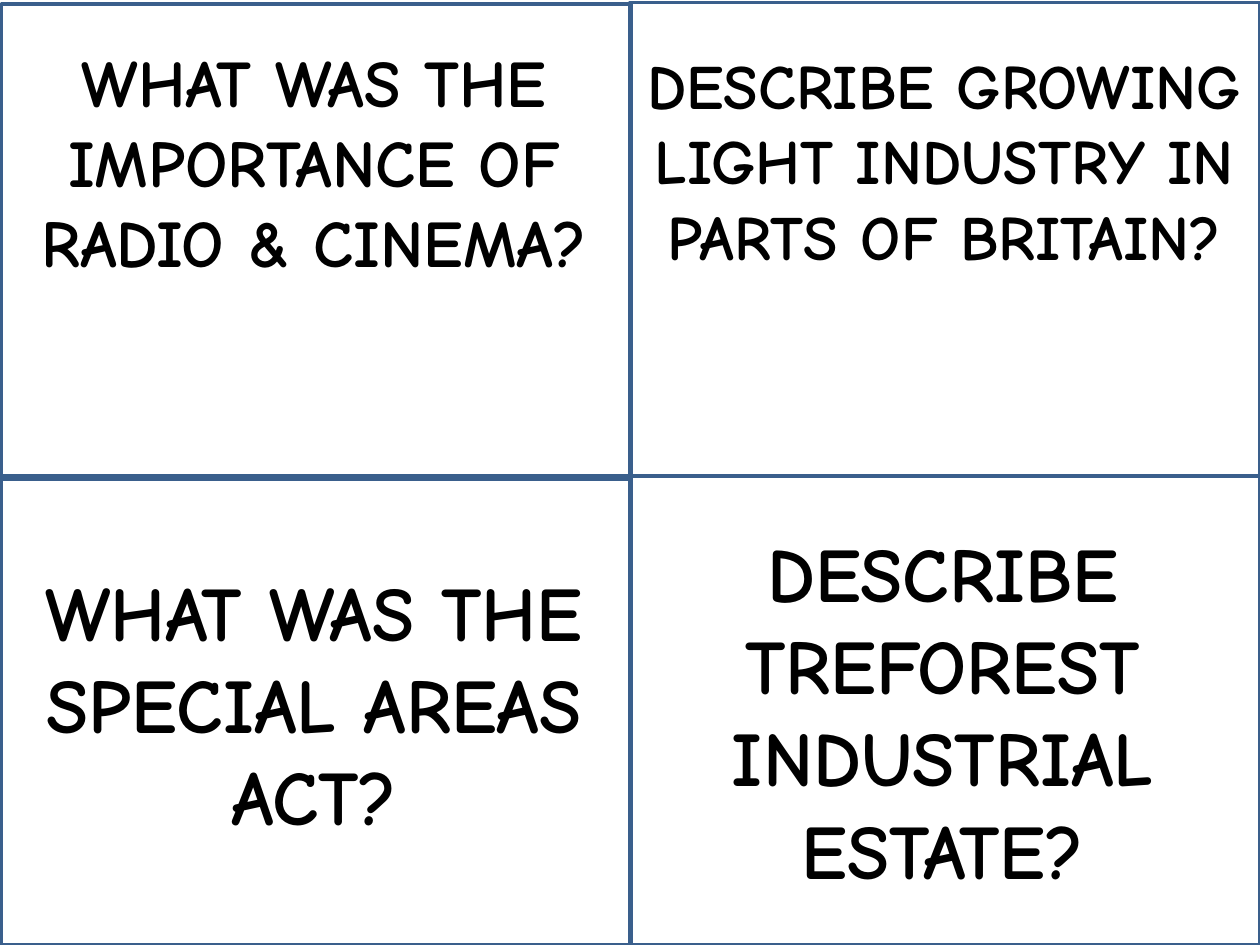
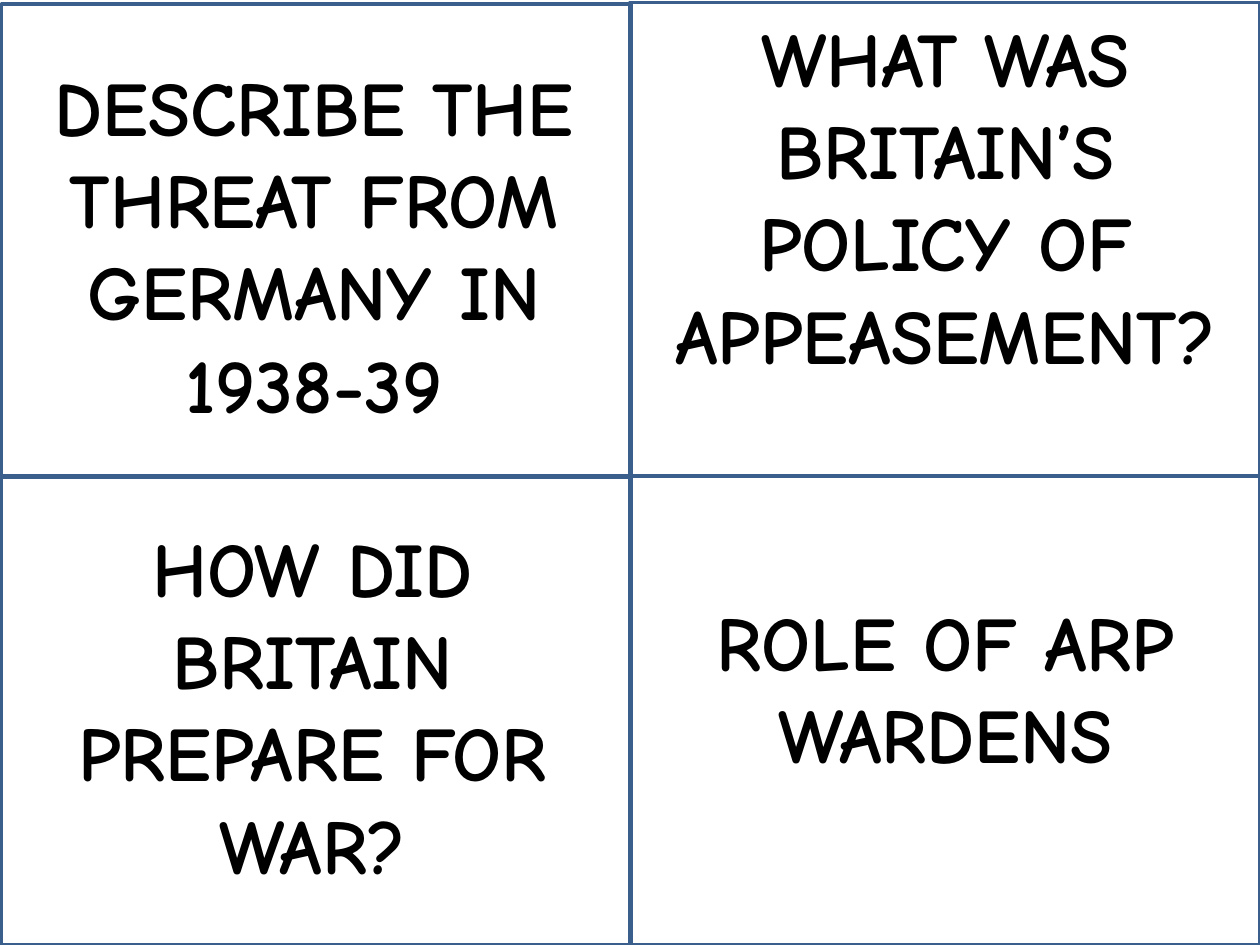
from pptx import Presentation
from pptx.dml.color import RGBColor
from pptx.enum.shapes import MSO_SHAPE as Shape
from pptx.enum.text import MSO_AUTO_SIZE as AutoSize, PP_ALIGN as Align
from pptx.util import Cm, Pt

FONT = "Comic Neue"
INK = "000000"
FRAME_LINE = "3A5F8C"
SLIDE_W, SLIDE_H = 25.4, 19.05
CARD_W = SLIDE_W / 2
TOP_H, BOTTOM_Y, BOTTOM_H = 9.55, 9.6, 9.45
TEXT_W = 12.67

DECK = [
    {
        "top_left_h": 9.58,
        "questions": [
            ("WHAT WAS THE IMPORTANCE OF RADIO & CINEMA?", -0.03, 0.71, 12.73, 6.76, 38),
            ("DESCRIBE GROWING LIGHT INDUSTRY IN PARTS OF BRITAIN?", 12.7, 0.81, TEXT_W, 7.95, 36),
            ("WHAT WAS THE SPECIAL AREAS ACT?", 0, 11.25, TEXT_W, 5.89, 44),
            ("DESCRIBE TREFOREST INDUSTRIAL ESTATE?", 12.67, 10.46, TEXT_W, 7.77, 44),
        ],
    },
    {
        "top_left_h": TOP_H,
        "questions": [
            ("DESCRIBE THE THREAT FROM GERMANY IN 1938-39", -0.03, 1.07, 12.73, 7.77, 44),
            ("WHAT WAS BRITAIN’S POLICY OF APPEASEMENT?", 12.73, 0.08, TEXT_W, 9.65, 44),
            ("HOW DID BRITAIN PREPARE FOR WAR?", -0.03, 10.36, TEXT_W, 7.77, 44),
            ("ROLE OF ARP WARDENS", 12.73, 11.86, TEXT_W, 4.01, 44),
        ],
    },
]


def color(hex_string):
    """Turn a hex string into a colour."""
    return RGBColor.from_string(hex_string)


def add_frame(s, x, y, h):
    """Draw the outline of one card."""
    sp = s.shapes.add_shape(Shape.RECTANGLE, Cm(x), Cm(y), Cm(CARD_W), Cm(h))
    sp.shadow.inherit = False
    sp.fill.background()
    sp.line.color.rgb = color(FRAME_LINE)
    sp.line.width = Pt(2)


def add_frames(s, top_left_h):
    """Draw the four card outlines of a slide."""
    add_frame(s, CARD_W, 0.05, TOP_H)
    add_frame(s, CARD_W, BOTTOM_Y, BOTTOM_H)
    add_frame(s, 0.03, 0.08, top_left_h)
    add_frame(s, 0.03, BOTTOM_Y, BOTTOM_H)


def add_question(s, text, x, y, w, h, size):
    """Write one centred question."""
    tf = s.shapes.add_textbox(Cm(x), Cm(y), Cm(w), Cm(h)).text_frame
    tf.word_wrap = True
    tf.auto_size = AutoSize.SHAPE_TO_FIT_TEXT
    p = tf.paragraphs[0]
    p.alignment = Align.CENTER
    r = p.add_run()
    r.text = text
    r.font.name = FONT
    r.font.size = Pt(size)
    r.font.bold = True
    r.font.color.rgb = color(INK)


def main():
    """Build the question cards and save them."""
    prs = Presentation()
    prs.slide_width, prs.slide_height = Cm(SLIDE_W), Cm(SLIDE_H)
    blank = prs.slide_layouts[6]
    for cards in DECK:
        s = prs.slides.add_slide(blank)
        add_frames(s, cards["top_left_h"])
        for question in cards["questions"]:
            add_question(s, *question)
    prs.save("out.pptx")


if __name__ == "__main__":
    main()
